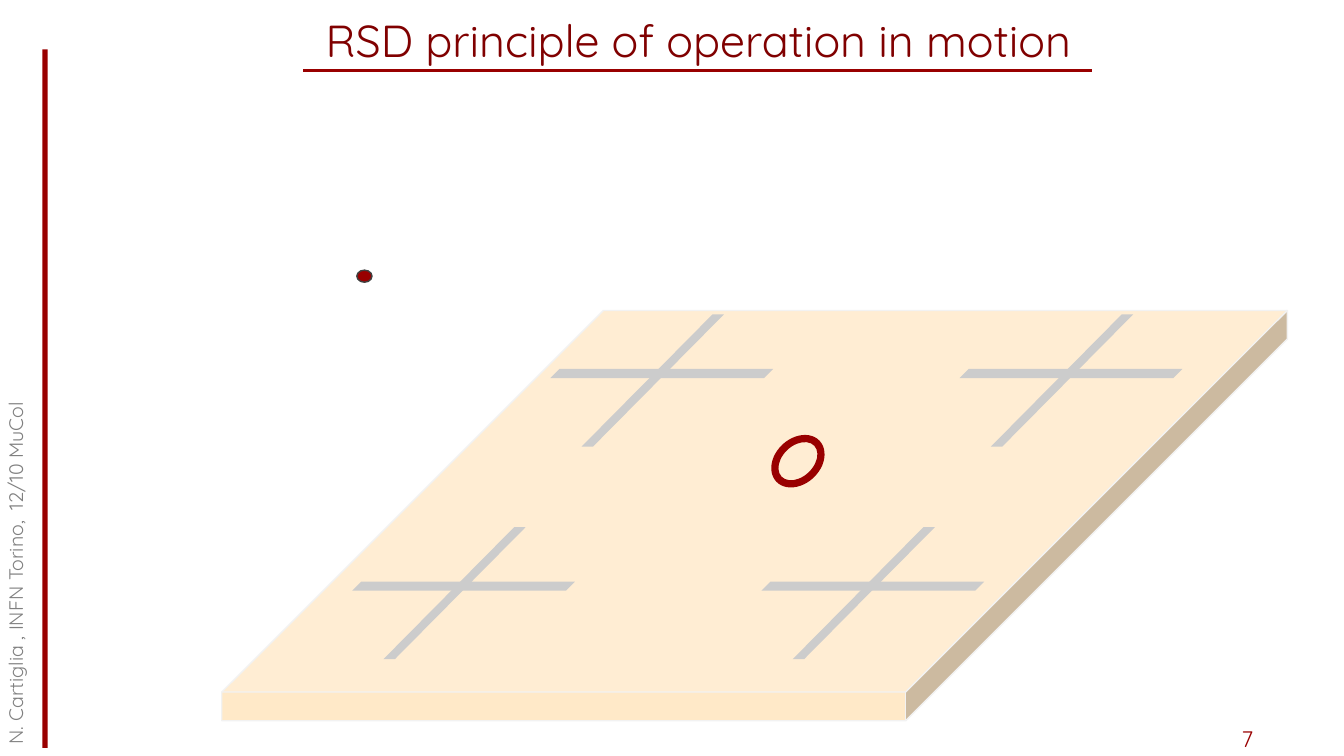
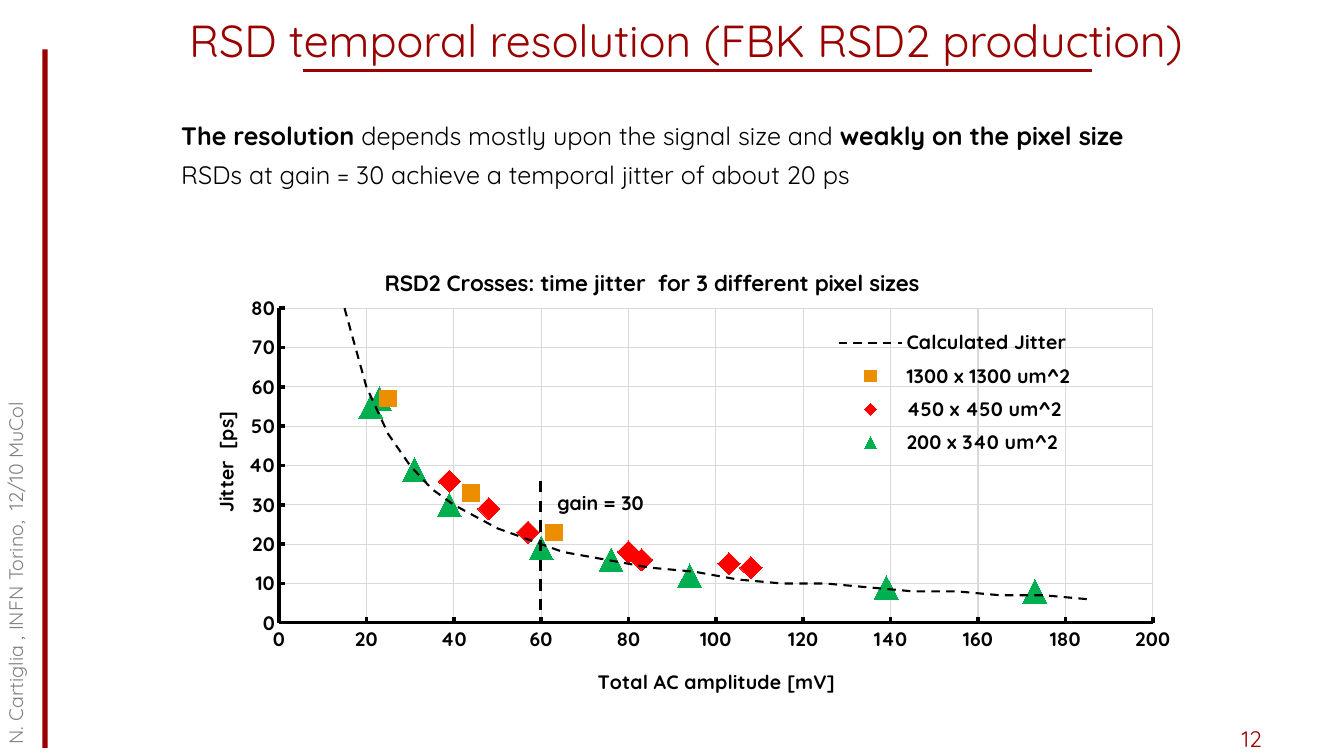
from lxml import etree
from pptx import Presentation
from pptx.chart.data import XyChartData
from pptx.dml.color import RGBColor
from pptx.enum.chart import XL_CHART_TYPE, XL_LEGEND_POSITION, XL_MARKER_STYLE, XL_TICK_MARK
from pptx.enum.dml import MSO_LINE
from pptx.enum.shapes import MSO_CONNECTOR, MSO_SHAPE
from pptx.enum.text import MSO_ANCHOR, PP_ALIGN
from pptx.oxml.ns import qn
from pptx.util import Inches, Pt

BLACK = RGBColor(0x00, 0x00, 0x00)
GREY = RGBColor(0x80, 0x80, 0x80)
DARK_GREY = RGBColor(0x40, 0x40, 0x40)
PALE_GREY = RGBColor(0xF2, 0xF2, 0xF2)
GRID_GREY = RGBColor(0xD9, 0xD9, 0xD9)
PAD_GREY = RGBColor(0xCC, 0xCC, 0xCC)
RED = RGBColor(0x99, 0x00, 0x00)
DEEP_RED = RGBColor(0x80, 0x00, 0x00)
BRIGHT_RED = RGBColor(0xFF, 0x00, 0x00)
ORANGE = RGBColor(0xEB, 0x8F, 0x00)
GREEN = RGBColor(0x00, 0xB0, 0x50)
SAND = RGBColor(0xFF, 0xE9, 0xC8)

RECTANGLE = MSO_SHAPE.RECTANGLE
ELLIPSE = MSO_SHAPE.OVAL
CUBE = MSO_SHAPE.CUBE
PARALLELOGRAM = MSO_SHAPE.PARALLELOGRAM
DONUT = MSO_SHAPE.DONUT
STRAIGHT = MSO_CONNECTOR.STRAIGHT
DASH = MSO_LINE.DASH
TOP, MIDDLE, BOTTOM = MSO_ANCHOR.TOP, MSO_ANCHOR.MIDDLE, MSO_ANCHOR.BOTTOM
LEFT, CENTER = PP_ALIGN.LEFT, PP_ALIGN.CENTER
SMOOTH_SCATTER = XL_CHART_TYPE.XY_SCATTER_SMOOTH_NO_MARKERS
LEGEND_RIGHT = XL_LEGEND_POSITION.RIGHT
TICK_INSIDE, TICK_NONE = XL_TICK_MARK.INSIDE, XL_TICK_MARK.NONE
NO_MARKER = XL_MARKER_STYLE.NONE
SQUARE = XL_MARKER_STYLE.SQUARE
DIAMOND = XL_MARKER_STYLE.DIAMOND
TRIANGLE = XL_MARKER_STYLE.TRIANGLE

FONT = "Quicksand"
FOOTER = "N. Cartiglia , INFN Torino,  12/10 MuCol"
GRID_CELLS = 100
BLANK_LAYOUT = 6

CROSS_STEP = 30.45
ROW_SHIFT = -14.75
ROW_STEP = 28.13

CURVE_X = [*range(5, 65, 5), *range(65, 186, 10)]
CURVE = [(amplitude, round(1200 / amplitude)) for amplitude in CURVE_X]
MEASUREMENTS = [
    ("1300 x 1300 um^2", SQUARE, 12, ORANGE, [(25, 57), (44, 33), (63, 23)]),
    ("450 x 450 um^2", DIAMOND, 16, BRIGHT_RED,
     [(39, 36), (48, 29), (57, 23), (80, 18), (83, 16), (103, 15), (108, 14)]),
    ("200 x 340 um^2", TRIANGLE, 17, GREEN,
     [(21, 55), (23, 57), (31, 39), (39, 30), (60, 19), (76, 16), (94, 12),
      (139, 9), (173, 8)]),
]


def assign(target, values):
    """Set each named attribute of the target."""
    for name, value in values.items():
        setattr(target, name, value)


def style_font(font, size, color=BLACK, bold=False):
    """Give a font the deck typeface, a size, a colour and a weight."""
    assign(font, {"name": FONT, "size": Pt(size), "bold": bold})
    font.color.rgb = color


def style_line(line, color, width, dash=None):
    """Give a line its colour, width and dash."""
    line.color.rgb = color
    assign(line, {"width": Pt(width), "dash_style": dash})


def place(element, inner=False, **shares):
    """Put a chart part at shares of the chart's size."""
    for old in element.findall(qn("c:layout")):
        element.remove(old)
    leaders = (qn("c:tx"), qn("c:legendPos"))
    layout = etree.Element(qn("c:layout"))
    element.insert(sum(child.tag in leaders for child in element), layout)
    manual = etree.SubElement(layout, qn("c:manualLayout"))
    values = {"layoutTarget": "inner"} if inner else {}
    values.update(xMode="edge", yMode="edge", **shares)
    for name, value in values.items():
        etree.SubElement(manual, qn(f"c:{name}")).set("val", str(value))


class Deck:
    """Hold the style and the current slide of the presentation."""

    def __init__(self):
        """Start an empty wide presentation."""
        self.presentation = Presentation()
        assign(self.presentation, {"slide_width": Inches(13.33), "slide_height": Inches(7.5)})
        self.column = self.presentation.slide_width / GRID_CELLS
        self.row = self.presentation.slide_height / GRID_CELLS
        self.slide = None

    def frame(self, *cells):
        """Turn alternating columns and rows into lengths."""
        return [round(cell * (self.row if index % 2 else self.column))
                for index, cell in enumerate(cells)]

    def new_slide(self, title, number, title_color=RED):
        """Add a slide with its bar, rule, title, number and footer."""
        layout = self.presentation.slide_layouts[BLANK_LAYOUT]
        self.slide = self.presentation.slides.add_slide(layout)
        self.shape(RECTANGLE, (3.15, 6.53, 0.4, 92.4), RED)
        self.line((22.58, 9.33, 81.23, 9.33), RED)
        self.text((91.65, 95.33, 6.08, 4.67), [[(str(number), False)]], 16, RED, anchor=MIDDLE)
        self.text((-26.18, 48.4, 54.98, 5.07), [[(FOOTER, False)]], 14, GREY, rotation=270)
        self.text((3.08, -0.27, 96.9, 9.73), [[(title, False)]], 32, title_color,
                  anchor=BOTTOM, alignment=CENTER)

    def shape(self, kind, cells, fill, outline=None, adjustment=None, rotation=0):
        """Add a filled preset shape."""
        shape = self.slide.shapes.add_shape(kind, *self.frame(*cells))
        shape.shadow.inherit = False
        shape.rotation = rotation
        shape.fill.solid()
        shape.fill.fore_color.rgb = fill
        if outline:
            style_line(shape.line, outline, 1)
        else:
            shape.line.fill.background()
        if adjustment is not None:
            shape.adjustments[0] = adjustment

    def line(self, cells, color, dash=None):
        """Add a straight line between two grid points."""
        connector = self.slide.shapes.add_connector(STRAIGHT, *self.frame(*cells))
        style_line(connector.line, color, 2, dash)
        etree.SubElement(connector._element.spPr, qn("a:effectLst"))

    def text(self, cells, paragraphs, size, color=BLACK, anchor=TOP, alignment=LEFT,
             spacing=1.0, rotation=0, wrap=True):
        """Add a text box of paragraphs made of (text, bold) runs."""
        box = self.slide.shapes.add_textbox(*self.frame(*cells))
        box.rotation = rotation
        assign(box.text_frame, {"word_wrap": wrap, "vertical_anchor": anchor})
        for index, runs in enumerate(paragraphs):
            paragraph = box.text_frame.add_paragraph() if index else box.text_frame.paragraphs[0]
            assign(paragraph, {"alignment": alignment, "line_spacing": spacing})
            for words, bold in runs:
                run = paragraph.add_run()
                run.text = words
                style_font(run.font, size, color, bold)

    def cross(self, column, row):
        """Add one slanted cross of the electrode grid."""
        across = column * CROSS_STEP + row * ROW_SHIFT
        down = row * ROW_STEP
        self.shape(PARALLELOGRAM, (43.28 + across, 41.6 + down, 10.58, 17.47), PAD_GREY,
                   adjustment=0.99)
        self.shape(PARALLELOGRAM, (40.95 + across, 48.8 + down, 16.58, 1.2), PAD_GREY,
                   adjustment=1, rotation=180)

    def chart_title(self, title, words, size, left, top):
        """Write and place a chart or axis title."""
        title.text_frame.text = words
        style_font(title.text_frame.paragraphs[0].runs[0].font, size, bold=True)
        place(title._element, x=left, y=top)

    def axis(self, axis, maximum, step, title, left, top):
        """Style one chart axis."""
        assign(axis, {"minimum_scale": 0, "maximum_scale": maximum, "major_unit": step,
                      "major_tick_mark": TICK_INSIDE, "minor_tick_mark": TICK_NONE,
                      "has_major_gridlines": True})
        style_line(axis.format.line, BLACK, 2.5)
        style_line(axis.major_gridlines.format.line, GRID_GREY, 0.75)
        style_font(axis.tick_labels.font, 14, bold=True)
        self.chart_title(axis.axis_title, title, 14, left, top)

    def jitter_chart(self, cells):
        """Add the scatter chart of jitter against amplitude."""
        data = XyChartData()
        named_points = [("Calculated Jitter", CURVE)]
        named_points += [(name, points) for name, *_, points in MEASUREMENTS]
        for name, points in named_points:
            series = data.add_series(name)
            for point in points:
                series.add_data_point(*point)
        chart = self.slide.shapes.add_chart(SMOOTH_SCATTER, *self.frame(*cells), data).chart
        style_font(chart.font, 14, bold=True)
        assign(chart, {"has_title": True, "has_legend": True})
        self.chart_title(chart.chart_title,
                         "RSD2 Crosses: time jitter  for 3 different pixel sizes", 16, 0.2, 0.05)
        self.axis(chart.category_axis, 200, 20, "Total AC amplitude [mV]", 0.41, 0.93)
        self.axis(chart.value_axis, 80, 10, "Jitter  [ps]", 0.03, 0.37)
        assign(chart.legend, {"position": LEGEND_RIGHT, "include_in_layout": False})
        style_font(chart.legend.font, 14, bold=True)
        place(chart.legend._element, x=0.64, y=0.18, w=0.25, h=0.31)
        plot = chart.plots[0]
        plot.vary_by_categories = False
        place(chart._chartSpace.chart.plotArea, inner=True, x=0.1, y=0.15, w=0.86, h=0.69)
        curve, *measured = plot.series
        curve.smooth = True
        curve.marker.style = NO_MARKER
        style_line(curve.format.line, BLACK, 1.5, DASH)
        for series, (_, style, size, color, _) in zip(measured, MEASUREMENTS):
            series.smooth = False
            series.format.line.fill.background()
            assign(series.marker, {"style": style, "size": size})
            series.marker.format.fill.solid()
            series.marker.format.fill.fore_color.rgb = color
            series.marker.format.line.fill.background()


def main():
    """Build and save both slides."""
    deck = Deck()

    deck.new_slide(" RSD principle of operation in motion", 7, DEEP_RED)
    deck.shape(CUBE, (16.5, 41.07, 79.28, 54.27), SAND, PALE_GREY, 0.93)
    for row in range(2):
        for column in range(2):
            deck.cross(column, row)
    deck.shape(ELLIPSE, (26.55, 35.73, 1.13, 1.6), RED, DARK_GREY)
    deck.shape(DONUT, (57.68, 57.07, 3.38, 7.87), RED, adjustment=0.16, rotation=46.6)

    deck.new_slide("RSD temporal resolution (FBK RSD2 production) ", 12)
    deck.jitter_chart((13.2, 31.73, 75.6, 60.93))
    deck.line((40.2, 63.6, 40.2, 82.4), BLACK, DASH)
    deck.text((40.73, 63.33, 8.02, 4.93), [[("gain = 30", True)]], 14, spacing=1.3, wrap=False)
    deck.text((12.75, 14, 76.65, 11.33), [
        [("The resolution ", True), ("depends mostly upon the signal size and ", False),
         ("weakly on the pixel size", True)],
        [("RSDs at gain = 30 achieve a temporal jitter of about 20 ps", False)],
    ], 18, spacing=1.3)

    deck.presentation.save("out.pptx")


if __name__ == "__main__":
    main()
